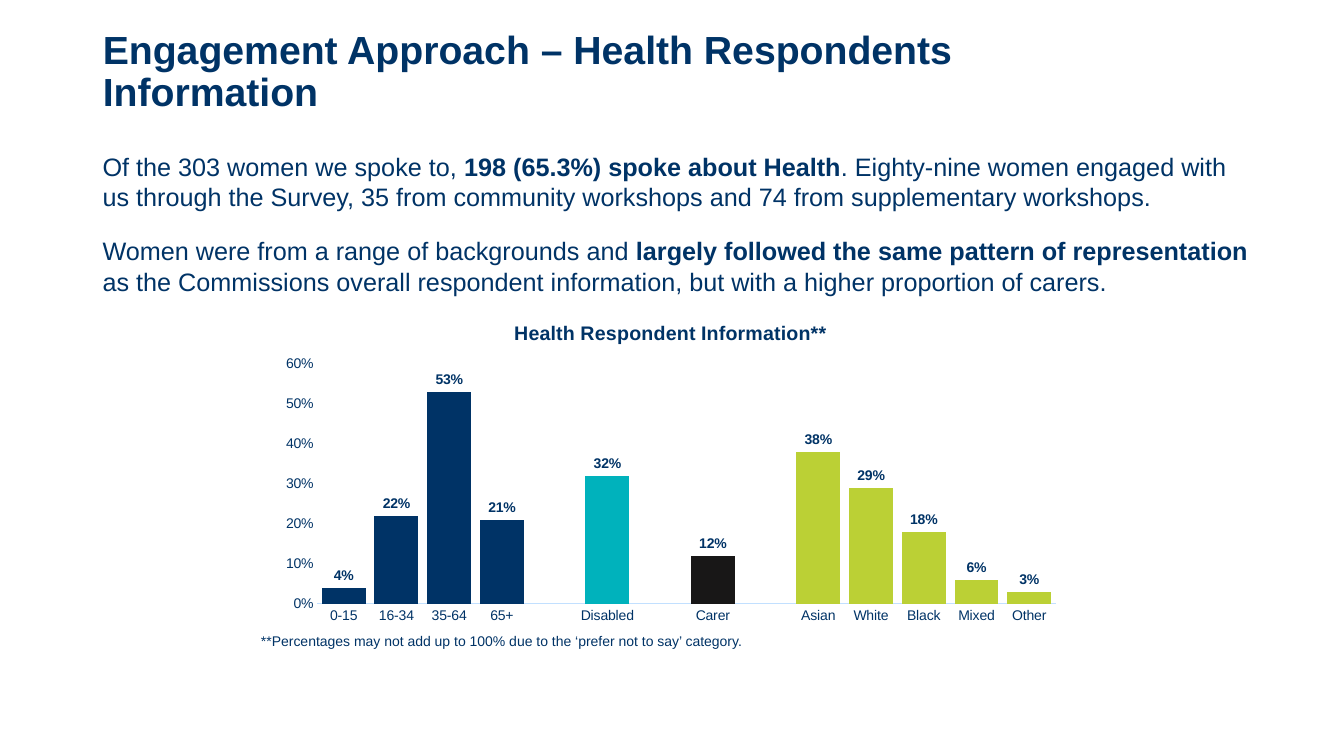
from lxml import etree
from pptx import Presentation
from pptx.chart.data import CategoryChartData
from pptx.dml.color import RGBColor
from pptx.enum.chart import XL_CHART_TYPE as ChartType
from pptx.enum.chart import XL_LABEL_POSITION as LabelPos
from pptx.enum.chart import XL_TICK_MARK as TickMark
from pptx.enum.text import MSO_ANCHOR as Anchor
from pptx.enum.text import PP_ALIGN as Align
from pptx.oxml.ns import qn
from pptx.util import Inches, Pt

NAVY, TEAL, BLACK, LIME, PALE = "003366", "00B2BC", "181717", "BBD035", "C2E0FF"

# Bar groups: colour and share of respondents per category
GROUPS = [
    (NAVY, {"0-15": 0.04, "16-34": 0.22, "35-64": 0.53, "65+": 0.21}),
    (TEAL, {"Disabled": 0.32}),
    (BLACK, {"Carer": 0.12}),
    (LIME, {"Asian": 0.38, "White": 0.29, "Black": 0.18, "Mixed": 0.06, "Other": 0.03}),
]


def rgb(value):
    return RGBColor.from_string(value)


class SlideBuilder:
    """Holds the text style and the current slide; places are percent of the slide."""

    font_name = "Arial"
    color = NAVY

    def __init__(self, prs):
        self.width, self.height = prs.slide_width, prs.slide_height
        self.slide = prs.slides.add_slide(prs.slide_layouts[5])

    def area(self, left, top, width, height):
        return (int(self.width * left / 100), int(self.height * top / 100),
                int(self.width * width / 100), int(self.height * height / 100))

    def style(self, font, size, bold=False):
        font.name, font.size, font.bold = self.font_name, Pt(size), bold
        font.color.rgb = rgb(self.color)

    def title(self, text, area, size):
        sp = self.slide.shapes.title
        sp.left, sp.top, sp.width, sp.height = self.area(*area)
        tf = sp.text_frame
        tf.text = text
        tf.word_wrap, tf.vertical_anchor = True, Anchor.MIDDLE
        p = tf.paragraphs[0]
        p.alignment, p.line_spacing = Align.LEFT, 0.9
        self.style(p.runs[0].font, size, True)

    def text(self, parts, area, size):
        """Add one paragraph; every second part is bold."""
        tf = self.slide.shapes.add_textbox(*self.area(*area)).text_frame
        tf.word_wrap = True
        for i, part in enumerate(parts):
            r = tf.paragraphs[0].add_run()
            r.text = part
            self.style(r.font, size, i % 2 == 1)

    def column_chart(self, title, groups, area, plot_area):
        """Add columns in coloured groups, with an empty category between groups."""
        bars = []
        for color, shares in groups:
            if bars:
                bars.append(("", None, None))
            bars += [(name, share, color) for name, share in shares.items()]

        data = CategoryChartData(number_format="0%")
        data.categories = [name for name, _, _ in bars]
        data.add_series("Series 1", [share for _, share, _ in bars])
        chart = self.slide.shapes.add_chart(
            ChartType.COLUMN_CLUSTERED, *self.area(*area), data).chart
        self.style(chart.font, 10)
        chart.has_legend = False
        chart.has_title = True
        tf = chart.chart_title.text_frame
        tf.text = title
        self.style(tf.paragraphs[0].runs[0].font, 14, True)

        plot = chart.plots[0]
        plot.gap_width, plot.overlap, plot.vary_by_categories = 20, -27, False
        series = plot.series[0]
        series.format.fill.solid()
        series.format.fill.fore_color.rgb = rgb(self.color)
        for i, (_, _, color) in enumerate(bars):
            if color:
                fill = series.points[i].format.fill
                fill.solid()
                fill.fore_color.rgb = rgb(color)
        labels = series.data_labels
        labels.show_value, labels.position = True, LabelPos.OUTSIDE_END
        labels.number_format, labels.number_format_is_linked = "0%", False
        self.style(labels.font, 10, True)

        self.axes(chart)
        self.place_plot(chart, plot_area)

    def axes(self, chart):
        for axis in (chart.category_axis, chart.value_axis):
            axis.major_tick_mark = axis.minor_tick_mark = TickMark.NONE
            axis.has_major_gridlines = False
            self.style(axis.tick_labels.font, 10)
        line = chart.category_axis.format.line
        line.color.rgb, line.width = rgb(PALE), Pt(0.75)
        values = chart.value_axis
        values.format.line.fill.background()
        values.minimum_scale, values.maximum_scale, values.major_unit = 0, 0.6, 0.1
        values.tick_labels.number_format = "0%"
        values.tick_labels.number_format_is_linked = False

    def place_plot(self, chart, shares):
        """Fix the inner plot area as x, y, w, h shares of the chart."""
        plot_area = chart.plots[0]._element.getparent()
        for old in plot_area.findall(qn("c:layout")):
            plot_area.remove(old)
        layout = etree.Element(qn("c:layout"))
        manual = etree.SubElement(layout, qn("c:manualLayout"))
        settings = [("layoutTarget", "inner"), ("xMode", "edge"), ("yMode", "edge")]
        for tag, value in settings + list(zip("xywh", shares)):
            etree.SubElement(manual, qn("c:" + tag)).set("val", str(value))
        plot_area.insert(0, layout)


def main():
    prs = Presentation()
    prs.slide_width, prs.slide_height = Inches(13.33), Inches(7.5)
    s = SlideBuilder(prs)
    s.title("Engagement Approach – Health Respondents Information",
            (6.9, 0, 80.2, 19.33), 28)
    s.text(["Of the 303 women we spoke to, ", "198 (65.3%) spoke about Health",
            ". Eighty-nine women engaged with us through the Survey, 35 from community "
            "workshops and 74 from supplementary workshops."],
           (6.9, 19.33, 85.45, 9.4), 18)
    s.text(["Women were from a range of backgrounds and ",
            "largely followed the same pattern of representation ",
            "as the Commissions overall respondent information, but with a higher "
            "proportion of carers."],
           (6.9, 30.53, 89.12, 9.4), 18)
    s.column_chart("Health Respondent Information**", GROUPS,
                   (20.03, 40.4, 59.71, 42.93), (0.06, 0.18, 0.92, 0.74))
    s.text(["**Percentages may not add up to 100% due to the ‘prefer not to say’ category."],
           (18.68, 83.07, 47.41, 3.6), 10)
    prs.save("out.pptx")


if __name__ == "__main__":
    main()
